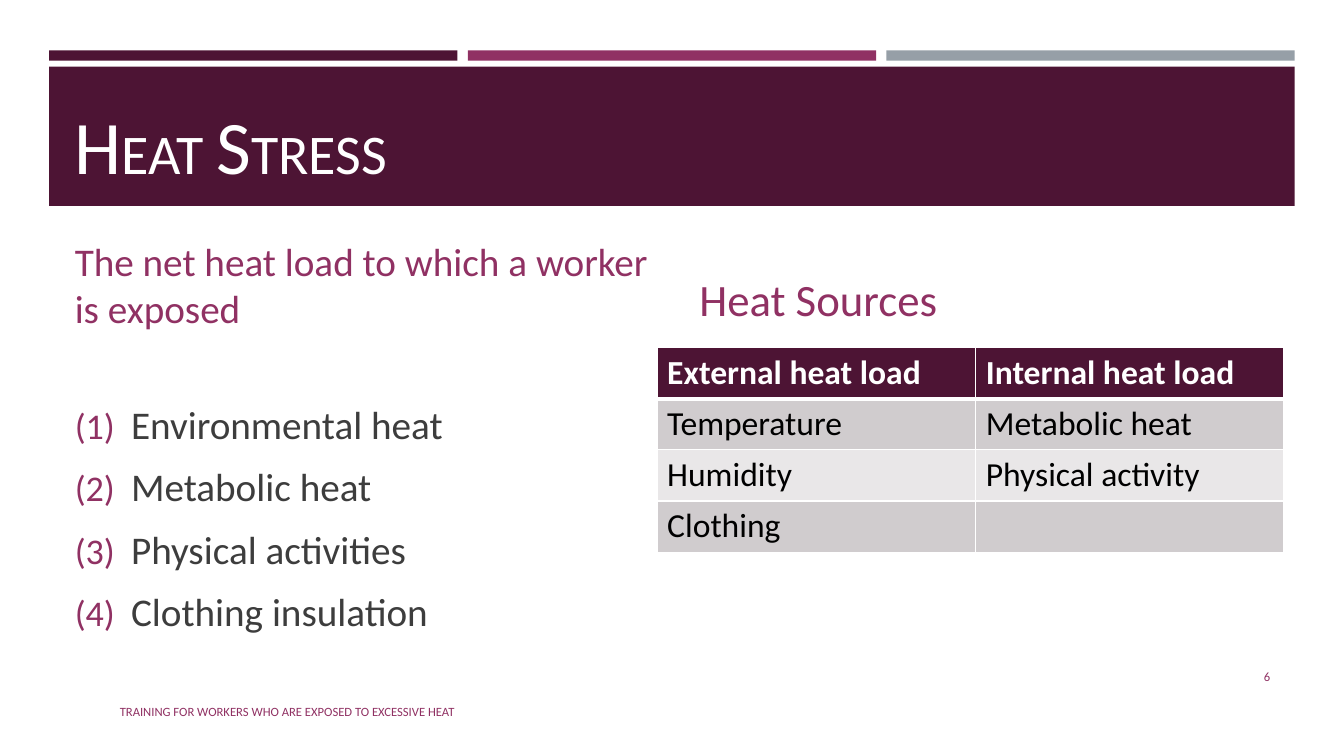
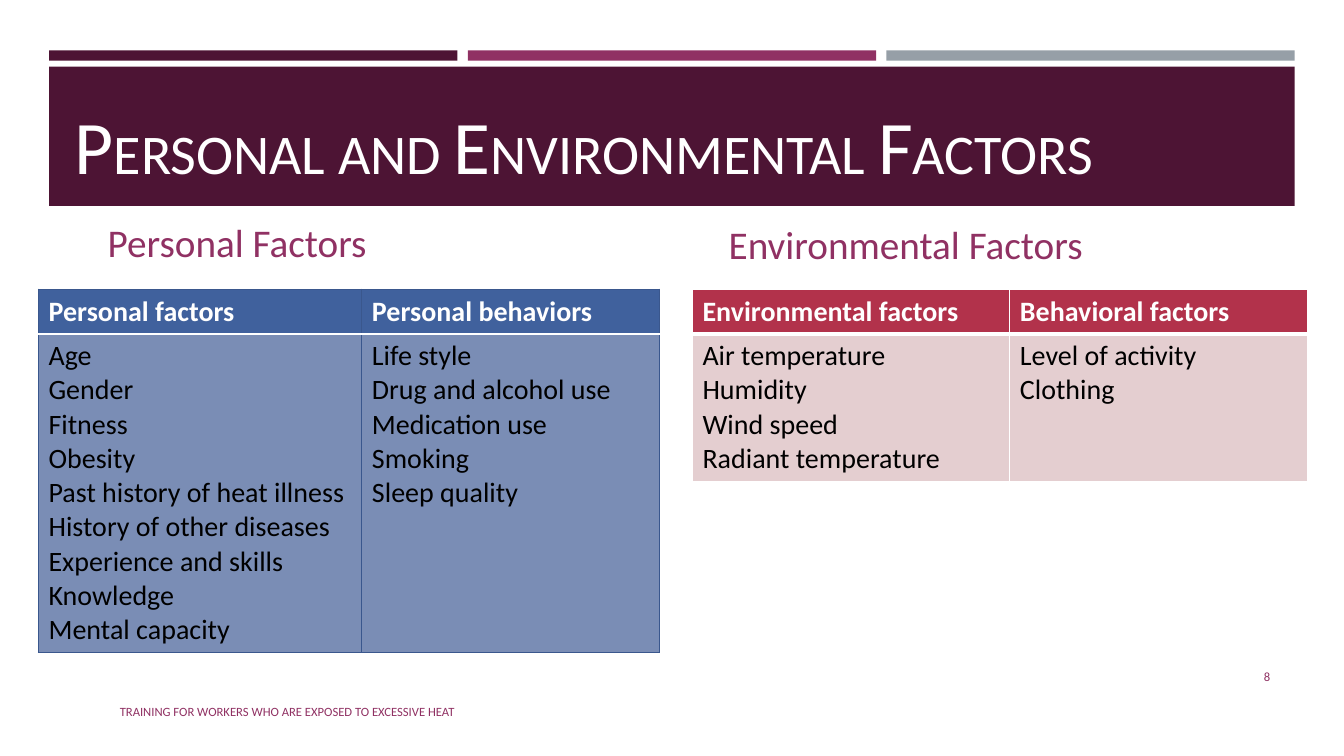
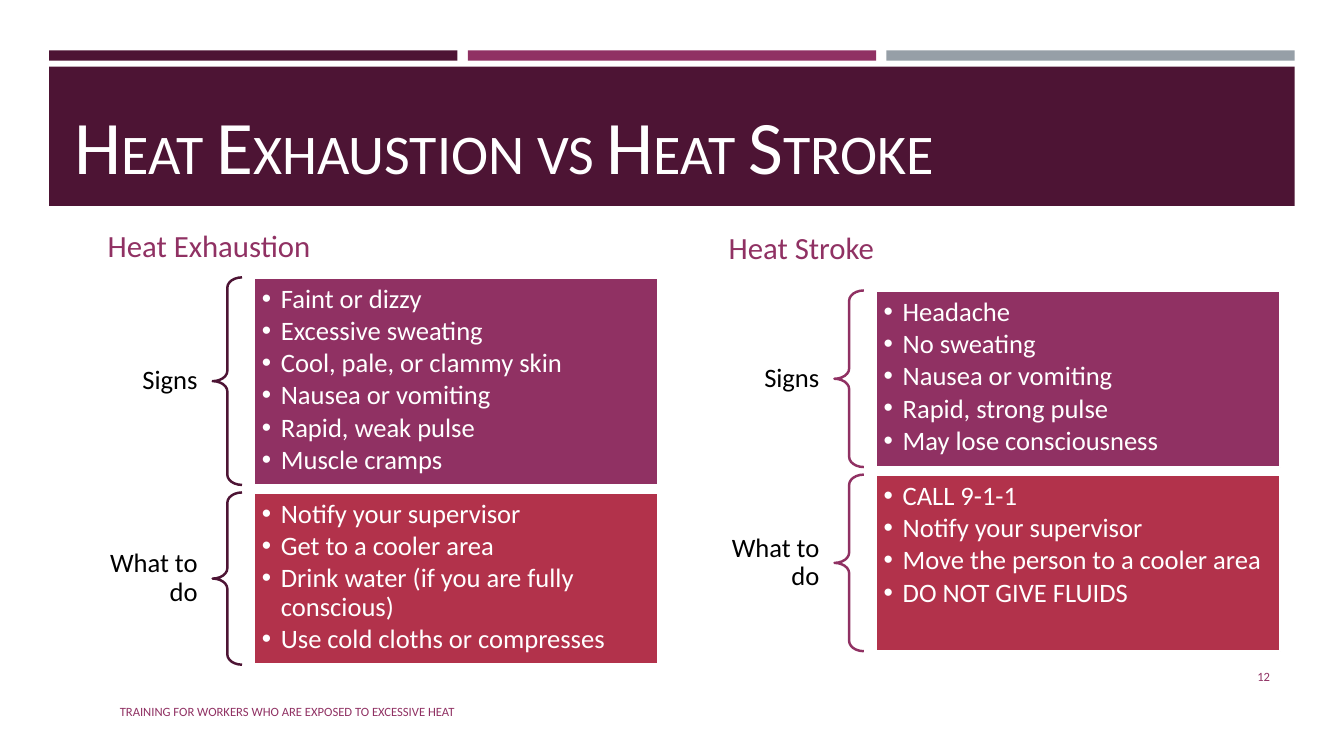
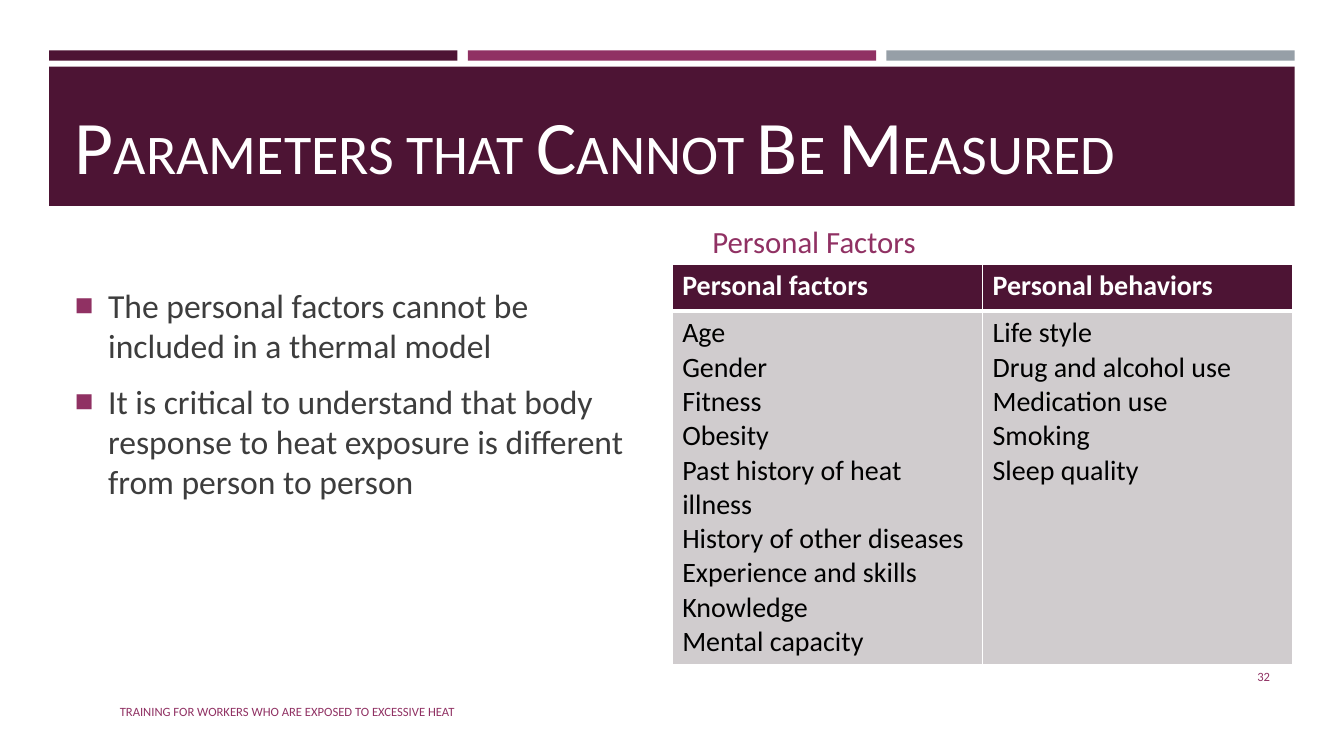
"""Build four slides on heat stress for worker training."""
from itertools import groupby
from lxml import etree
from pptx import Presentation, util as u
from pptx.dml.color import RGBColor
from pptx.enum import shapes, text
from pptx.oxml.ns import qn

PLUM, ROSE, GREY, RED, BLUE = "4D1434", "903163", "969FA7", "B2324B", "40619D"
WHITE, BLACK, INK, ASH, MIST = "FFFFFF", "000000", "3D3D3D", "D0CCCE", "E9E7E8"
FONT = "Calibri"
NOTE = "TRAINING FOR WORKERS WHO ARE EXPOSED TO EXCESSIVE HEAT"
SELF = [
    "Age\nGender\nFitness\nObesity\nPast history of heat illness\n"
    "History of other diseases\nExperience and skills\nKnowledge\nMental capacity",
    "Life style\nDrug and alcohol use\nMedication use\nSmoking\nSleep quality",
]


def hue(code):
    """Turn a hex string into a colour."""
    return RGBColor.from_string(code)


def node(parent, tag, **attrs):
    """Append a drawing element to its parent."""
    return etree.SubElement(parent, qn("a:" + tag), attrs)


def spot(box):
    """Turn centimetres into lengths."""
    return [u.Cm(n) for n in box]


def place(shape, box):
    """Move and size a shape."""
    shape.left, shape.top, shape.width, shape.height = spot(box)


def bullet(par, indent, color, scale, mark):
    """Give a paragraph a hanging bullet, or a number when mark is empty."""
    props = par._p.get_or_add_pPr()
    props.set("marL", str(u.Cm(indent)))
    props.set("indent", str(-u.Cm(indent)))
    node(node(props, "buClr"), "srgbClr", val=color)
    node(props, "buSzPct", val=str(scale * 1000))
    if mark:
        node(props, "buFont", typeface="Arial")
        node(props, "buChar", char=mark)
    else:
        node(props, "buFont", typeface=FONT)
        node(props, "buAutoNum", type="arabicParenBoth")


class Deck:
    """Holds the style and the current slide."""

    def __init__(self):
        """Open a wide deck."""
        self.show = Presentation()
        self.show.slide_width, self.show.slide_height = spot((33.87, 19.05))
        self.base = self.show.slide_layouts.get_by_name("Comparison")
        self.slide = None

    def bands(self):
        """Draw the shared bands and move them to the layout."""
        tops = [(1.24 + 10.55 * i, 1.27, 10.29, 0.26) for i in range(3)]
        rows = zip(tops + [(1.24, 1.68, 31.39, 3.51)], (PLUM, ROSE, GREY, PLUM))
        for i, (box, color) in enumerate(rows):
            item = self.shape("RECTANGLE", box, color)._element
            item.nvSpPr.cNvPr.set("id", str(50 + i))
            self.base.shapes._spTree.insert(2 + i, item)

    def start(self, title, number):
        """Add a slide with its title and footer."""
        self.slide = self.show.slides.add_slide(self.base)
        if len(self.show.slides) == 1:
            self.bands()
        head = self.slide.shapes.title
        place(head, (1.63, 2.03, 30.63, 2.74))
        frame = head.text_frame
        self.frame(frame, text.MSO_ANCHOR.BOTTOM)
        frame.margin_bottom = 0
        par = frame.paragraphs[0]
        par.alignment = text.PP_ALIGN.LEFT
        self.font(par, None, WHITE)
        for big, part in groupby(title, str.isupper):
            run = par.add_run()
            run.text = "".join(part).upper()
            run.font.size = u.Pt(54 if big else 40)
        self.label((2.77, 17.42, 19.2, 1.02), NOTE, 9, ROSE)
        self.label((29.34, 16.54, 2.92, 1.02), str(number), 9, ROSE, True)

    def frame(self, frame, anchor):
        """Set how a text frame wraps and anchors."""
        frame.word_wrap = True
        frame.auto_size = text.MSO_AUTO_SIZE.NONE
        frame.vertical_anchor = anchor

    def font(self, par, size, color, bold=False):
        """Set the font of a paragraph."""
        font = par.font
        font.name, font.bold = FONT, bold
        font.color.rgb = hue(color)
        if size:
            font.size = u.Pt(size)

    def shape(self, kind, box, fill=None, line=None):
        """Add a preset shape."""
        item = self.slide.shapes.add_shape(getattr(shapes.MSO_SHAPE, kind), *spot(box))
        item.shadow.inherit = False
        if fill:
            item.fill.solid()
            item.fill.fore_color.rgb = hue(fill)
        else:
            item.fill.background()
        if line:
            item.line.color.rgb = hue(line)
            item.line.width = u.Pt(1.75)
        else:
            item.line.fill.background()
        return item

    def label(self, box, words, size, color, right=False, side=0.25, space=1.0):
        """Add a text box centred in height."""
        frame = self.slide.shapes.add_textbox(*spot(box)).text_frame
        self.frame(frame, text.MSO_ANCHOR.MIDDLE)
        frame.margin_left = frame.margin_right = u.Cm(side)
        frame.text = words
        par = frame.paragraphs[0]
        par.line_spacing = space
        par.alignment = text.PP_ALIGN.RIGHT if right else text.PP_ALIGN.LEFT
        self.font(par, size, color)

    def body(self, spot_id, box, words, size, color=ROSE, indent=0, mark=""):
        """Fill a body placeholder with a heading or a list."""
        item = self.slide.placeholders[spot_id]
        place(item, box)
        frame = item.text_frame
        anchor = text.MSO_ANCHOR.TOP if indent else text.MSO_ANCHOR.BOTTOM
        self.frame(frame, anchor)
        frame.text = words
        for i, par in enumerate(frame.paragraphs):
            par.space_before, par.space_after = u.Pt(5 if i else 0), u.Pt(6)
            if indent:
                bullet(par, indent, ROSE, 92, mark)
            self.font(par, size, color)

    def table(self, left, top, cols, rows, cells, size, fills, edge=WHITE, rule=3):
        """Add a table with a header row and one fill for each row."""
        box = spot((left, top, sum(cols), sum(rows)))
        grid = self.slide.shapes.add_table(len(rows), len(cols), *box).table
        grid.horz_banding = False
        for col, width in zip(grid.columns, cols):
            col.width = u.Cm(width)
        for i, row in enumerate(grid.rows):
            row.height = u.Cm(rows[i])
            for cell, words in zip(row.cells, cells[i]):
                self.edges(cell, i, edge, rule)
                cell.fill.solid()
                cell.fill.fore_color.rgb = hue(fills[i])
                cell.text = words
                for par in cell.text_frame.paragraphs:
                    self.font(par, size, BLACK if i else WHITE, i == 0)

    def edges(self, cell, row, edge, rule):
        """Draw cell borders, with a white rule under the header."""
        props = cell._tc.get_or_add_tcPr()
        for side in "LRTB":
            under = (row, side) in ((0, "B"), (1, "T"))
            width = u.Pt(rule if under else 1)
            line = node(props, "ln" + side, w=str(width))
            color = WHITE if under else edge
            node(node(line, "solidFill"), "srgbClr", val=color)

    def braces(self, left, top, color, groups):
        """Stack labelled braces, each with a filled list."""
        for (name, tall, fill), high, words in groups:
            mid = top + high / 2
            self.label((left - 3.73, mid - tall / 2, 3.73, tall), name, 19, BLACK,
                       True, 0.38, 0.9)
            brace = self.shape("LEFT_BRACE", (left, top, 0.74, high), None, color)
            brace.adjustments[0], brace.adjustments[1] = 0.35, 0.5
            card = self.shape("RECTANGLE", (left + 1.04, top, 10.19, high), fill, WHITE)
            frame = card.text_frame
            self.frame(frame, text.MSO_ANCHOR.TOP)
            frame.margin_left = frame.margin_right = u.Cm(0.2)
            frame.margin_top = frame.margin_bottom = u.Cm(0.2)
            frame.text = words
            for par in frame.paragraphs:
                par.alignment = text.PP_ALIGN.LEFT
                par.line_spacing, par.space_after = 0.9, u.Pt(2.5)
                bullet(par, 0.48, WHITE, 100, "•")
                self.font(par, 19, WHITE)
            top += high + 0.19

    def close(self):
        """Remove the placeholders left empty."""
        for item in list(self.slide.placeholders):
            if not item.text_frame.text:
                item._element.getparent().remove(item._element)


def main():
    """Build and save the slides."""
    deck = Deck()

    deck.start("Heat Stress", 6)
    deck.body(1, (1.63, 6.99, 15.09, 1.5),
              "The net heat load to which a worker is exposed", 28)
    deck.body(2, (1.63, 9.96, 14.99, 5.28),
              "Environmental heat\nMetabolic heat\nPhysical activities\nClothing insulation",
              28, INK, 1.42)
    deck.body(3, (17.37, 6.78, 14.12, 1.55), "Heat Sources", 32)
    deck.table(16.56, 8.76, (8.03, 7.77), (1.28,) * 4,
               [("External heat load", "Internal heat load"),
                ("Temperature", "Metabolic heat"),
                ("Humidity", "Physical activity"),
                ("Clothing", "")], 24, (PLUM, ASH, MIST, ASH))
    deck.close()

    heads = ("Personal factors", "Personal behaviors")
    deck.start("Personal and Environmental Factors", 8)
    deck.body(1, (2.46, 5.31, 14.12, 1.5), "Personal Factors", 28)
    deck.body(3, (18.11, 5.31, 14.12, 1.55), "Environmental Factors", 28)
    deck.table(0.97, 7.29, (8.15, 7.49), (1.09, 8), [heads, SELF], 20,
               (BLUE, "7A8DB5"), "3A578D", 1.75)
    deck.table(17.45, 7.29, (8, 7.49), (1.09, 3.73),
               [("Environmental factors", "Behavioral factors"),
                ("Air temperature\nHumidity\nWind speed\nRadiant temperature",
                 "Level of activity\nClothing")], 20, (RED, "E4CED0"))
    deck.close()

    signs, steps = ("Signs", 1.04, ROSE), ("What to do", 1.7, RED)
    deck.start("Heat Exhaustion vs Heat Stroke", 12)
    deck.body(1, (2.46, 5.28, 14.12, 1.5), "Heat Exhaustion", 22)
    deck.body(3, (18.11, 5.28, 14.12, 1.55), "Heat Stroke", 22)
    deck.braces(5.36, 6.99, PLUM, [
        (signs, 5.23, "Faint or dizzy\nExcessive sweating\nCool, pale, or clammy skin\n"
                      "Nausea or vomiting\nRapid, weak pulse\nMuscle cramps"),
        (steps, 4.34, "Notify your supervisor\nGet to a cooler area\n"
                      "Drink water (if you are fully conscious)\n"
                      "Use cold cloths or compresses")])
    deck.braces(21.03, 7.32, ROSE, [
        (signs, 4.45, "Headache\nNo sweating\nNausea or vomiting\n"
                      "Rapid, strong pulse\nMay lose consciousness"),
        (steps, 4.45, "CALL 9-1-1\nNotify your supervisor\n"
                      "Move the person to a cooler area\nDO NOT GIVE FLUIDS")])
    deck.close()

    deck.start("Parameters that Cannot Be Measured", 32)
    deck.body(3, (17.7, 5.11, 14.12, 1.55), "Personal Factors", 22)
    deck.table(16.94, 6.65, (7.82, 7.82), (1.19, 8.71), [heads, SELF], 20, (PLUM, ASH))
    deck.body(2, (1.63, 7.04, 14.99, 8.15),
              "The personal factors cannot be included in a thermal model\n"
              "It is critical to understand that body response to heat exposure "
              "is different from person to person", 24, INK, 0.84, "■")
    deck.close()

    deck.show.save("out.pptx")


if __name__ == "__main__":
    main()
